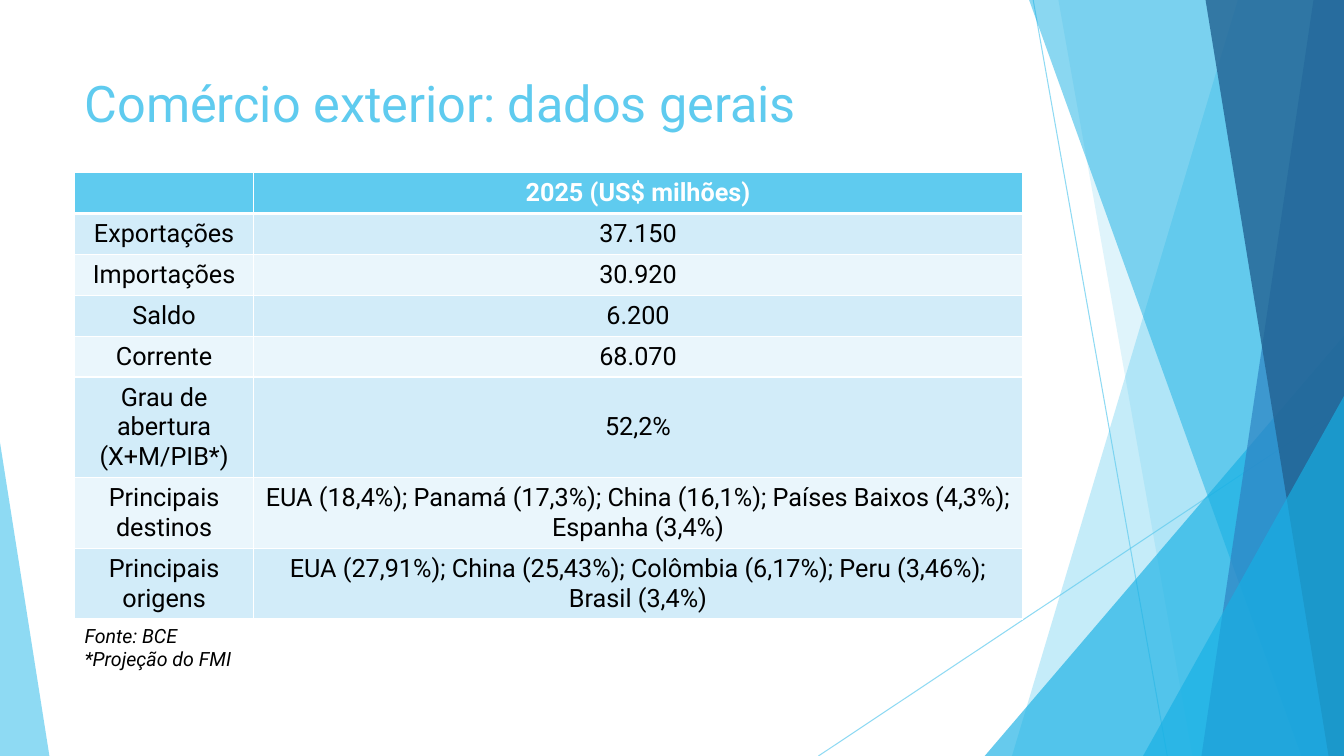
import pptx
import pptx.util
import pptx.dml.color
import pptx.enum.shapes
import pptx.enum.text
import pptx.oxml
import pptx.oxml.ns

Pt = pptx.util.Pt
ALIGN = pptx.enum.text.PP_ALIGN
ANCHOR = pptx.enum.text.MSO_ANCHOR
SHAPE = pptx.enum.shapes.MSO_SHAPE

WIDTH, HEIGHT = 960, 540
FONT = "Roboto"
COLORS = {
    "sky": "5FCBEF", "cyan": "17B0E4", "blue": "2E83C3", "navy": "226292",
    "band_dark": "D2ECF9", "band_light": "EAF6FC", "white": "FFFFFF", "black": "000000",
}

TITLE = "Comércio exterior: dados gerais"
ROWS = [
    ("", "2025 (US$ milhões)"),
    ("Exportações", "37.150"),
    ("Importações", "30.920"),
    ("Saldo", "6.200"),
    ("Corrente", "68.070"),
    ("Grau de abertura (X+M/PIB*)", "52,2%"),
    ("Principais destinos",
     "EUA (18,4%); Panamá (17,3%); China (16,1%); Países Baixos (4,3%); Espanha (3,4%)"),
    ("Principais origens",
     "EUA (27,91%); China (25,43%); Colômbia (6,17%); Peru (3,46%); Brasil (3,4%)"),
]
NOTES = ["Fonte: BCE", "*Projeção do FMI"]

COLUMN_WIDTHS = [127.9, 549.1]
ROW_HEIGHTS = [29.2] * 5 + [70.7, 49.2, 49.2]
LEFT, TABLE_TOP = 53.3, 123.3

RAYS = [((738, 0), (833.8, HEIGHT)), ((WIDTH, 290.2), (584.6, HEIGHT))]
FACETS = [
    ("strip", (884.2, 722.9), "sky", 36),
    ("strip", (756, 851.8), "sky", 20),
    ("triangle", (703.4, 239.8, 256.6, 1), "cyan", 66),
    ("strip", (735.1, 929.5), "cyan", 50),
    ("strip", (938.2, 858.2), "blue", 70),
    ("strip", (861.1, 949), "navy", 80),
    ("triangle", (816.5, 283, 143.5, 1), "cyan", 66),
    ("triangle", (0, 316.1, 35.3, 0), "sky", 70),
]


def rgb(name):
    return pptx.dml.color.RGBColor.from_string(COLORS[name])


def set_alpha(element, percent):
    color = element.find(".//" + pptx.oxml.ns.qn("a:srgbClr"))
    alpha = pptx.oxml.parse_xml(f'<a:alpha {pptx.oxml.ns.nsdecls("a")} val="{percent * 1000}"/>')
    color.append(alpha)


def add_ray(slide, start, end):
    points = [Pt(value) for value in start + end]
    ray = slide.shapes.add_connector(pptx.enum.shapes.MSO_CONNECTOR.STRAIGHT, *points)
    ray.line.width = Pt(0.75)
    ray.line.color.rgb = rgb("sky")
    set_alpha(ray.line._get_or_add_ln(), 70)
    effects = pptx.oxml.parse_xml(f'<a:effectLst {pptx.oxml.ns.nsdecls("a")}/>')
    ray._element.spPr.append(effects)


def add_facet(slide, kind, geometry, color, opacity):
    if kind == "strip":
        top_x, bottom_x = geometry
        builder = slide.shapes.build_freeform(Pt(top_x), 0)
        corners = [(WIDTH, 0), (WIDTH, HEIGHT), (bottom_x, HEIGHT)]
        builder.add_line_segments([(Pt(x), Pt(y)) for x, y in corners], close=True)
        facet = builder.convert_to_shape()
    else:
        left, top, width, apex = geometry
        facet = slide.shapes.add_shape(
            SHAPE.ISOSCELES_TRIANGLE, Pt(left), Pt(top), Pt(width), Pt(HEIGHT - top))
        facet.adjustments[0] = apex
    facet.shadow.inherit = False
    facet.line.fill.background()
    facet.fill.solid()
    facet.fill.fore_color.rgb = rgb(color)
    set_alpha(facet._element.spPr, opacity)


def write(frame, lines, color, alignment, **formats):
    frame.word_wrap = True
    for index, line in enumerate(lines):
        paragraph = frame.paragraphs[0] if index == 0 else frame.add_paragraph()
        paragraph.alignment = alignment
        paragraph.text = line
        for name, value in {"name": FONT, **formats}.items():
            setattr(paragraph.font, name, value)
        paragraph.font.color.rgb = rgb(color)


def add_text(slide, box, *content, **formats):
    textbox = slide.shapes.add_textbox(*[Pt(value) for value in box])
    write(textbox.text_frame, *content, **formats)


def set_borders(cell, widths):
    properties = cell._tc.get_or_add_tcPr()
    for position, (side, width) in enumerate(widths.items()):
        border = pptx.oxml.parse_xml(
            f'<a:{side} {pptx.oxml.ns.nsdecls("a")} w="{Pt(width)}"><a:solidFill>'
            f'<a:srgbClr val="{COLORS["white"]}"/></a:solidFill></a:{side}>')
        properties.insert(position, border)


def add_trade_table(slide):
    frame = slide.shapes.add_table(
        len(ROWS), len(COLUMN_WIDTHS), Pt(LEFT), Pt(TABLE_TOP),
        Pt(sum(COLUMN_WIDTHS)), Pt(sum(ROW_HEIGHTS)))
    table = frame.table
    for column, width in zip(table.columns, COLUMN_WIDTHS):
        column.width = Pt(width)
    for index, (texts, height) in enumerate(zip(ROWS, ROW_HEIGHTS)):
        table.rows[index].height = Pt(height)
        header = index == 0
        fill = "sky" if header else ("band_dark" if index % 2 else "band_light")
        for column, text in enumerate(texts):
            cell = table.cell(index, column)
            cell.fill.solid()
            cell.fill.fore_color.rgb = rgb(fill)
            cell.vertical_anchor = ANCHOR.TOP if header else ANCHOR.MIDDLE
            write(cell.text_frame, [text], "white" if header else "black",
                  ALIGN.CENTER, size=Pt(18), bold=header)
            set_borders(cell, {"lnL": 1, "lnR": 1, "lnT": 3 if index == 1 else 1,
                               "lnB": 3 if header else 1})


def main():
    presentation = pptx.Presentation()
    presentation.slide_width, presentation.slide_height = Pt(WIDTH), Pt(HEIGHT)
    slide = presentation.slides.add_slide(presentation.slide_layouts[6])
    for start, end in RAYS:
        add_ray(slide, start, end)
    for facet in FACETS:
        add_facet(slide, *facet)
    add_text(slide, (LEFT, 48.2, 677, 103.7), [TITLE], "sky", ALIGN.LEFT, size=Pt(36))
    add_trade_table(slide)
    add_text(slide, (LEFT, 442.1, 347, 41), NOTES, "black", ALIGN.JUSTIFY,
             size=Pt(14), italic=True)
    presentation.save("out.pptx")


if __name__ == "__main__":
    main()
